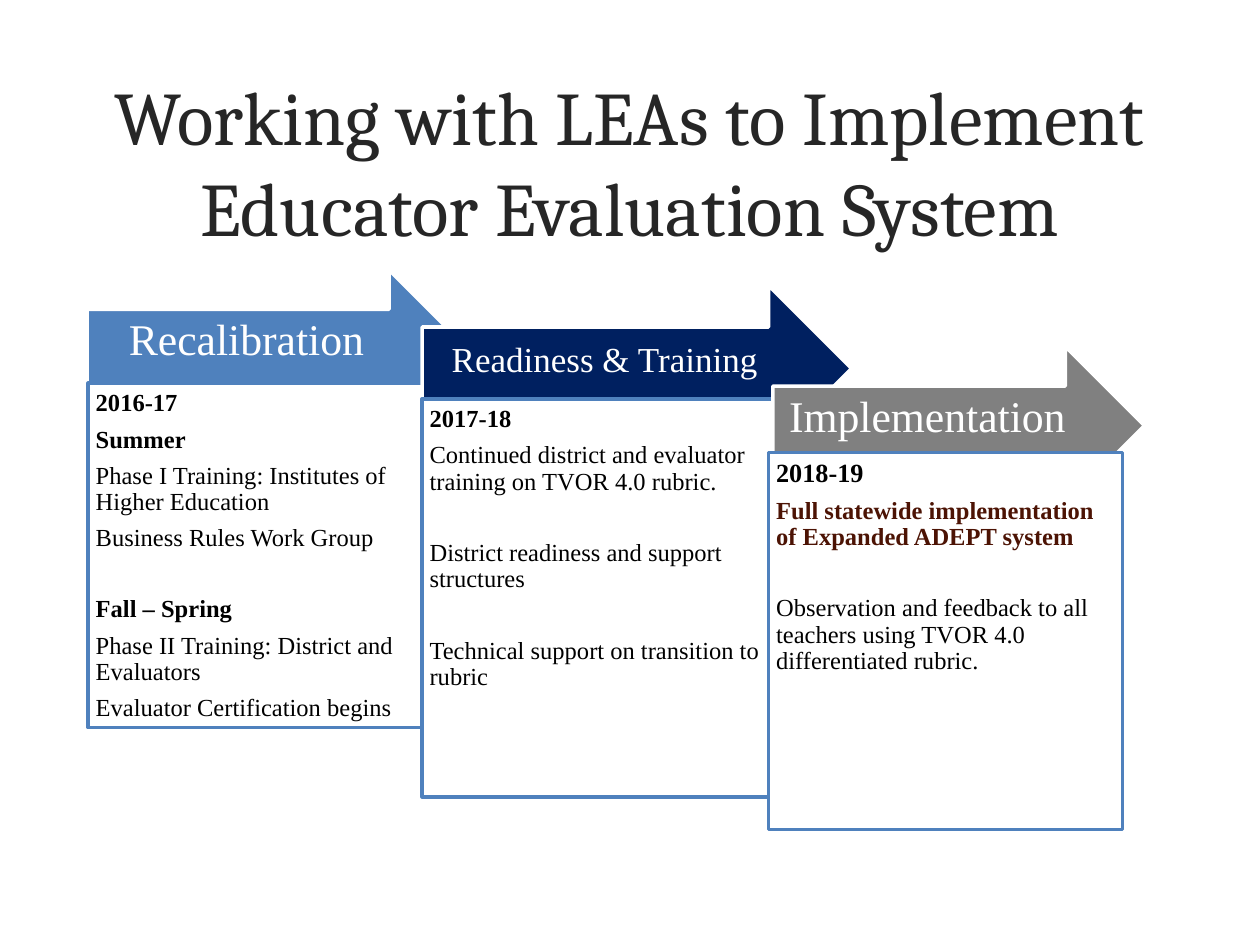
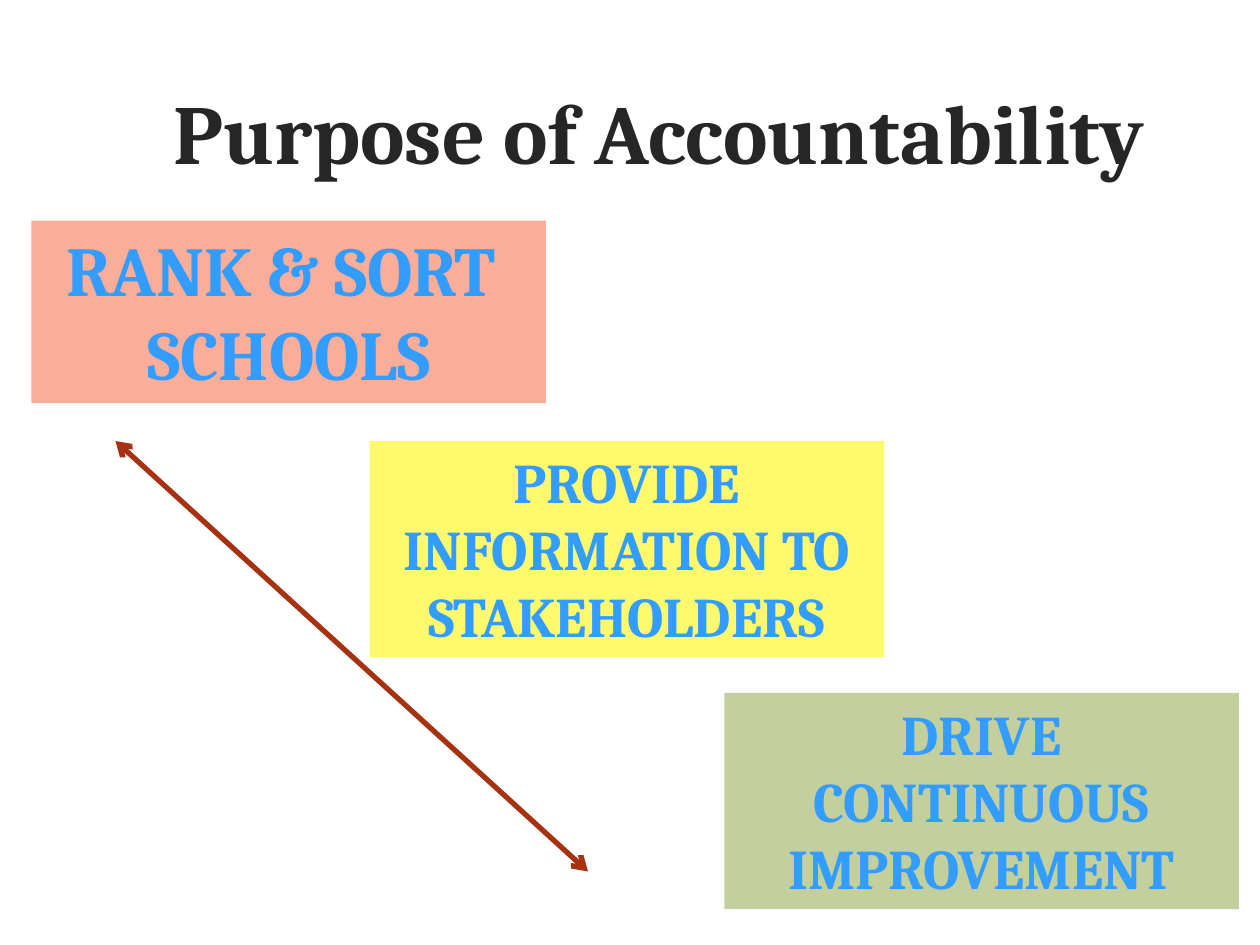
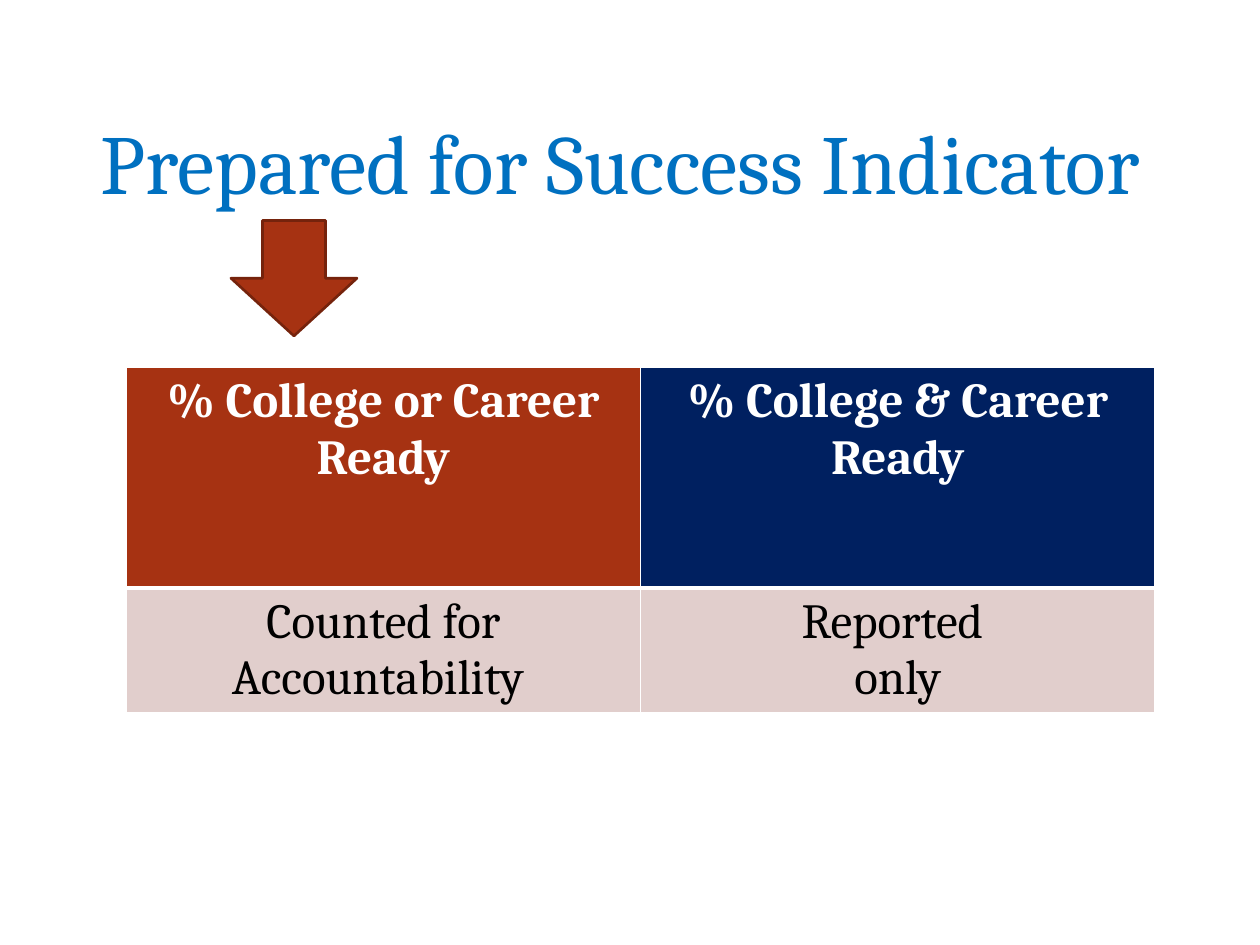
from lxml import etree
from pptx import Presentation
from pptx.dml.color import RGBColor
from pptx.enum.shapes import MSO_CONNECTOR, MSO_SHAPE
from pptx.enum.text import MSO_ANCHOR, MSO_AUTO_SIZE, PP_ALIGN
from pptx.oxml.ns import qn
from pptx.util import Inches, Pt

RECT, RIGHT, DOWN = MSO_SHAPE.RECTANGLE, MSO_SHAPE.RIGHT_ARROW, MSO_SHAPE.DOWN_ARROW
LINE = MSO_CONNECTOR.STRAIGHT
LEFT, MID = PP_ALIGN.LEFT, PP_ALIGN.CENTER
TOP, CENTRE = MSO_ANCHOR.TOP, MSO_ANCHOR.MIDDLE
FIXED = MSO_AUTO_SIZE.NONE

COLS, ROWS = 120, 90
HEAD, BODY = "Cambria", "Times New Roman"
HEX = {
    "ink": "262626", "black": "000000", "white": "FFFFFF", "sky": "0070C0",
    "blue": "4F81BD", "navy": "002060", "grey": "808080", "maroon": "4C1304",
    "rust": "A63212", "edge": "75230C", "blush": "E1CECC", "bright": "339DFF",
    "salmon": "FAAD99", "yellow": "FFF96D", "sage": "C3D09E",
}
TITLE_BOX = (7.2, 5.8, 105.5, 19)


def rgb(name):
    return RGBColor.from_string(HEX[name])


def write(frame, paras, pad=None, anchor=TOP, **base):
    """Fill a text frame; each item is a string or (string, format changes)."""
    frame.word_wrap = True
    frame.vertical_anchor = anchor
    if pad:
        (frame.margin_left, frame.margin_top,
         frame.margin_right, frame.margin_bottom) = map(Inches, pad)
    for i, item in enumerate(paras):
        words, change = (item, {}) if isinstance(item, str) else item
        look = {"font": HEAD, "size": 28, "color": "ink", "bold": False,
                "align": MID, **base, **change}
        para = frame.paragraphs[0] if i == 0 else frame.add_paragraph()
        para.alignment = look["align"]
        if "lead" in look:
            para.line_spacing = look["lead"]
        if "after" in look:
            para.space_after = Pt(look["after"])
        if "before" in look:
            para.space_before = Pt(look["before"])
        run = para.add_run()
        run.text = words
        run.font.name = look["font"]
        run.font.size = Pt(look["size"])
        run.font.bold = look["bold"]
        run.font.color.rgb = rgb(look["color"])


class Deck:
    def __init__(self):
        self.show = Presentation()
        self.show.slide_width, self.show.slide_height = Inches(10), Inches(7.5)
        self.page = None

    def x(self, cols):
        return int(self.show.slide_width * cols / COLS)

    def y(self, rows):
        return int(self.show.slide_height * rows / ROWS)

    def box(self, left, top, wide, high):
        return self.x(left), self.y(top), self.x(wide), self.y(high)

    def start(self, title, box=TITLE_BOX, **look):
        self.page = self.show.slides.add_slide(self.show.slide_layouts[5])
        head = self.page.shapes.title
        head.left, head.top, head.width, head.height = self.box(*box)
        head.text_frame.auto_size = FIXED
        write(head.text_frame, [title], anchor=CENTRE, **look)

    def shape(self, kind, box, fill, line=None, width=2):
        item = self.page.shapes.add_shape(kind, *self.box(*box))
        item.shadow.inherit = False
        item.fill.solid()
        item.fill.fore_color.rgb = rgb(fill)
        if line:
            item.line.color.rgb = rgb(line)
            item.line.width = Pt(width)
        else:
            item.line.fill.background()
        return item

    def arrow(self, box, fill, words, size):
        item = self.shape(RIGHT, box, fill, "white")
        write(item.text_frame, [words], pad=(0.1, 0.13, 0.28, 0.25),
              anchor=CENTRE, font=BODY, size=size, color="white", lead=0.9)

    def panel(self, box, paras):
        item = self.shape(RECT, box, "white", "blue")
        write(item.text_frame, paras, pad=[0.06] * 4, font=BODY, size=14,
              color="black", align=LEFT, lead=0.9, after=5.5)

    def label(self, box, fill, paras, size):
        item = self.page.shapes.add_textbox(*self.box(*box))
        item.fill.solid()
        item.fill.fore_color.rgb = rgb(fill)
        write(item.text_frame, paras, size=size, color="bright", bold=True)

    def link(self, start, end, color, width):
        """Draw a line with an open arrowhead at both ends."""
        item = self.page.shapes.add_connector(
            LINE, self.x(start[0]), self.y(start[1]), self.x(end[0]), self.y(end[1]))
        item.line.color.rgb = rgb(color)
        item.line.width = Pt(width)
        props = item.line._get_or_add_ln()
        for tag in ("a:headEnd", "a:tailEnd"):
            etree.SubElement(props, qn(tag), type="arrow")
        etree.SubElement(item._element.spPr, qn("a:effectLst"))

    def table(self, box, highs, cells):
        """Draw a grid of (fill, paragraphs, format) cells, ruled in white."""
        grid = self.page.shapes.add_table(len(cells), len(cells[0]), *self.box(*box)).table
        for r, line in enumerate(cells):
            grid.rows[r].height = self.y(highs[r])
            for c, (fill, paras, look) in enumerate(line):
                cell = grid.cell(r, c)
                rule(cell, top=3 if r else 1, bottom=1 if r else 3)
                cell.fill.solid()
                cell.fill.fore_color.rgb = rgb(fill)
                write(cell.text_frame, paras, **look)


def rule(cell, top, bottom):
    props = cell._tc.get_or_add_tcPr()
    for side, width in zip("LRTB", (1, 1, top, bottom)):
        line = etree.SubElement(props, qn("a:ln" + side), w=str(Pt(width)))
        fill = etree.SubElement(line, qn("a:solidFill"))
        etree.SubElement(fill, qn("a:srgbClr"), val=HEX["white"])


def phases(deck):
    deck.start("Working with LEAs to Implement Educator Evaluation System", size=43.2)
    bold, gap = {"bold": True}, {"before": 20}
    steps = [
        ((8.3, 25.7, 36.3, 15.1), "blue", "Recalibration", 25,
         (8.4, 36.5, 32.8, 32.8),
         [("2016-17", bold), ("Summer", bold),
          "Phase I Training: Institutes of Higher Education",
          "Business Rules Work Group",
          ("Fall – Spring", {**bold, **gap}),
          "Phase II Training: District and Evaluators",
          "Evaluator Certification begins"]),
        ((40.2, 27.2, 40.9, 15.8), "navy", "Readiness & Training", 20,
         (40.2, 38, 33.6, 37.9),
         [("2017-18", bold),
          "Continued district and evaluator training on TVOR 4.0 rubric.",
          ("District readiness and support structures", gap),
          ("Technical support on transition to rubric", gap)]),
        ((73.6, 33, 35.4, 15.1), "grey", "Implementation", 25,
         (73.2, 43.1, 33.7, 35.9),
         [("2018-19", {**bold, "size": 15}),
          ("Full statewide implementation of Expanded ADEPT system",
           {**bold, "color": "maroon"}),
          ("Observation and feedback to all teachers using TVOR 4.0 "
           "differentiated rubric.", gap)]),
    ]
    for place, fill, name, size, area, paras in steps:
        deck.arrow(place, fill, name, size)
        deck.panel(area, paras)


def purpose(deck):
    deck.start("Purpose of Accountability", (10, 3, 105.5, 19), size=48, bold=True)
    goals = [
        (3, 21, 17.4, "salmon", ["RANK & SORT ", "SCHOOLS"], 40),
        (35.2, 42, 20.6, "yellow", ["PROVIDE INFORMATION TO STAKEHOLDERS"], 32),
        (69, 66, 20.6, "sage", ["DRIVE CONTINUOUS IMPROVEMENT"], 32),
    ]
    for left, top, high, fill, paras, size in goals:
        deck.label((left, top, 49, high), fill, paras, size)
    deck.link((11, 42), (56, 83), "rust", 3)


def success(deck):
    deck.start("Prepared for Success Indicator ", size=48, color="sky")
    head = {"color": "white", "bold": True}
    body = {"color": "black"}
    deck.table((12, 35, 98, 32.8), (21, 11.8), [
        [("rust", ["% College or Career Ready"], head),
         ("navy", ["% College & Career Ready"], head)],
        [("blush", ["Counted for Accountability "], body),
         ("blush", ["Reported ", "only"], body)],
    ])
    deck.shape(DOWN, (22, 21, 12, 11), "rust", "edge", 1.5)


def main():
    deck = Deck()
    for build in (phases, purpose, success):
        build(deck)
    deck.show.save("out.pptx")


if __name__ == "__main__":
    main()
